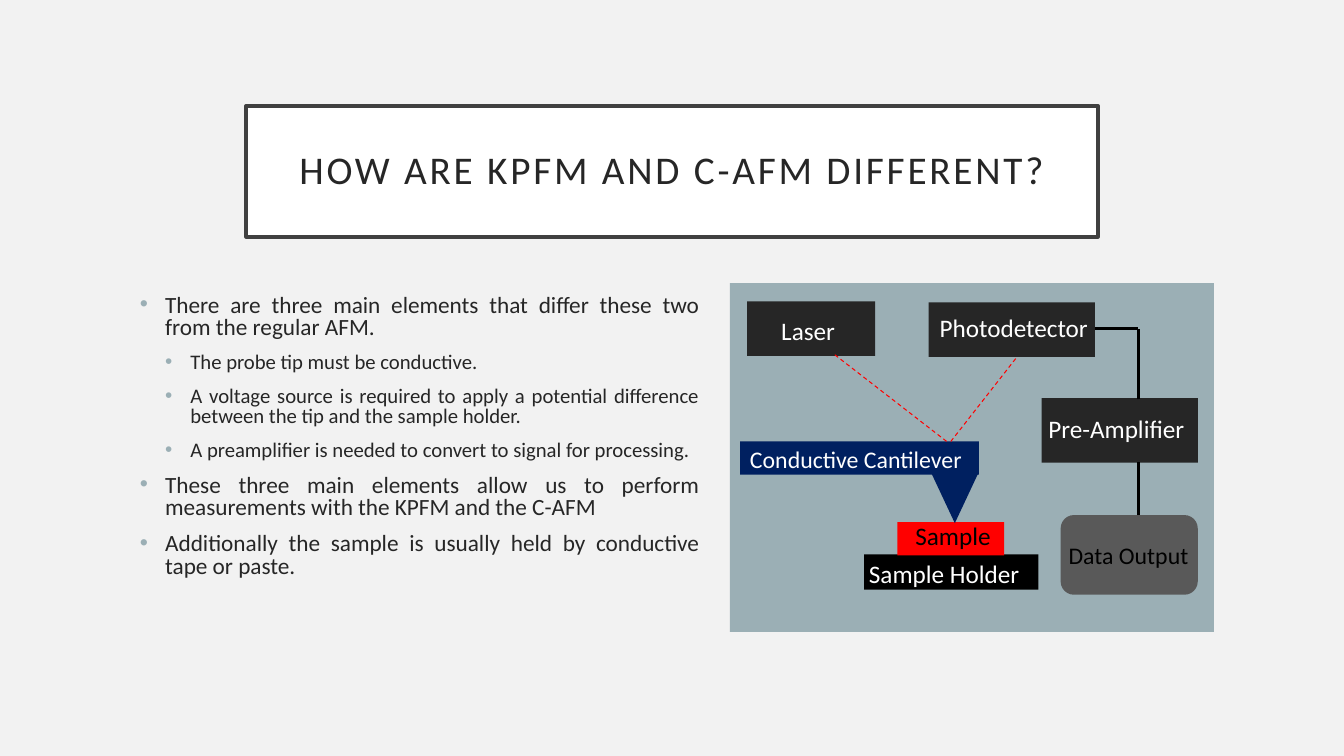
from dataclasses import dataclass

from lxml import etree
from pptx import Presentation
from pptx.dml.color import RGBColor
from pptx.enum.dml import MSO_LINE
from pptx.enum.shapes import MSO_CONNECTOR, MSO_SHAPE
from pptx.enum.text import MSO_ANCHOR, MSO_AUTO_SIZE, PP_ALIGN
from pptx.oxml.ns import qn
from pptx.util import Emu, Inches, Pt

RECTANGLE = MSO_SHAPE.RECTANGLE
ROUNDED = MSO_SHAPE.ROUNDED_RECTANGLE
TRIANGLE = MSO_SHAPE.ISOSCELES_TRIANGLE
STRAIGHT = MSO_CONNECTOR.STRAIGHT
DASH = MSO_LINE.DASH
LEFT, CENTER, JUSTIFY = PP_ALIGN.LEFT, PP_ALIGN.CENTER, PP_ALIGN.JUSTIFY

# The grid has 75 rows; columns are as wide as rows are high
SLIDE_WIDTH, SLIDE_HEIGHT = Inches(13.33), Inches(7.5)
CELL = SLIDE_HEIGHT / 75
FONT = "Calibri"
COLORS = {
    "background": "F2F2F2", "white": "FFFFFF", "black": "000000",
    "frame": "404040", "dark": "262626", "accent": "9BAFB5",
    "red": "FF0000", "navy": "002060", "gray": "595959",
}


@dataclass(frozen=True)
class Area:
    column: float
    row: float
    columns: float
    rows: float

    def lengths(self) -> tuple[Emu, ...]:
        return tuple(grid(cells) for cells in
                     (self.column, self.row, self.columns, self.rows))


@dataclass(frozen=True)
class Block:
    area: Area
    color: str
    kind: int = RECTANGLE
    rotation: float = 0


@dataclass(frozen=True)
class Label:
    text: str
    area: Area
    color: str = "white"
    size: float = 18


@dataclass(frozen=True)
class Link:
    start: tuple[float, float]
    end: tuple[float, float]
    color: str = "black"
    width: float = 2.5
    dashed: bool = False


@dataclass(frozen=True)
class Bullet:
    text: str
    level: int = 0


TITLE = "HOW ARE KPFM AND C-AFM DIFFERENT?"
TITLE_AREA = Area(24.4, 10.5, 84.5, 13)
BODY_AREA = Area(12.9, 28.8, 57.4, 33.9)
BULLET_SIZES = (16.6, 14.8)
BULLETS = [
    Bullet("There are three main elements that differ these two from the regular AFM."),
    Bullet("The probe tip must be conductive.", 1),
    Bullet("A voltage source is required to apply a potential difference "
           "between the tip and the sample holder.", 1),
    Bullet("A preamplifier is needed to convert to signal for processing.", 1),
    Bullet("These three main elements allow us to perform measurements "
           "with the KPFM and the C-AFM"),
    Bullet("Additionally the sample is usually held by conductive tape or paste."),
]
BLOCKS = [
    Block(Area(72.4, 28.1, 48, 34.6), "accent"),
    Block(Area(86.4 - 0.7, 55, 17.3, 3.5), "black"),
    Block(Area(89, 51.8, 10.6, 3.3), "red"),
    Block(Area(92.4, 47, 4.6, 4.9), "navy", TRIANGLE, 180),
    Block(Area(73.4, 43.8, 23.7, 3.3), "navy"),
    Block(Area(74.1, 29.9, 12.7, 5.4), "dark"),
    Block(Area(92.1, 30, 16.5, 5.4), "dark"),
    Block(Area(103.3, 39.5, 15.5, 6.4), "dark"),
    Block(Area(105.2, 51.1, 13.6, 7.9), "gray", ROUNDED),
]
LABELS = [
    Label("Sample Holder", Area(85.2, 54.9, 20, 4)),
    Label("Sample", Area(89.8, 51.1, 10.6, 4), "black"),
    Label("Conductive Cantilever", Area(73.4, 43.6, 25.7, 3.9), size=17),
    Label("Laser", Area(76.5, 30.8, 10.7, 4)),
    Label("Photodetector", Area(92.2, 30.5, 17.2, 4)),
    Label("Pre-Amplifier", Area(103, 40.5, 17.3, 4)),
    Label("Data Output", Area(105, 53.1, 15.3, 3.9), "black", 17),
]
LINKS = [
    Link((82.8, 35.2), (93.9, 43.8), "red", 0.75, True),
    Link((94.3, 43.8), (100.8, 35.5), "red", 0.75, True),
    Link((108.6, 32.6), (112.9, 32.6)),
    Link((112.9, 39.6), (112.9, 32.6)),
    Link((112.9, 51.1), (112.9, 45.8)),
]


def grid(cells: float) -> Emu:
    return Emu(round(cells * CELL))


def rgb(name: str) -> RGBColor:
    return RGBColor.from_string(COLORS[name])


def add_run(paragraph, text: str, size: float, color: str):
    run = paragraph.add_run()
    run.text = text
    run.font.name = FONT
    run.font.size = Pt(size)
    run.font.color.rgb = rgb(color)
    return run


def format_title(title) -> None:
    title.left, title.top, title.width, title.height = TITLE_AREA.lengths()
    title.fill.solid()
    title.fill.fore_color.rgb = rgb("white")
    title.line.color.rgb = rgb("frame")
    title.line.width = Pt(2.5)
    frame = title.text_frame
    frame.word_wrap = True
    frame.auto_size = MSO_AUTO_SIZE.NONE
    frame.vertical_anchor = MSO_ANCHOR.MIDDLE
    frame.margin_left = frame.margin_right = grid(2)
    frame.margin_top = frame.margin_bottom = grid(2)
    paragraph = frame.paragraphs[0]
    paragraph.alignment = CENTER
    paragraph.line_spacing = 0.9
    run = add_run(paragraph, TITLE, 28, "dark")
    run.font._element.set("spc", "200")


def add_text_frame(slide, area: Area):
    frame = slide.shapes.add_textbox(*area.lengths()).text_frame
    frame.word_wrap = True
    return frame


def add_bullets(slide, bullets: list[Bullet]) -> None:
    frame = add_text_frame(slide, BODY_AREA)
    for index, bullet in enumerate(bullets):
        paragraph = frame.add_paragraph() if index else frame.paragraphs[0]
        paragraph.alignment = JUSTIFY
        paragraph.level = bullet.level
        paragraph.line_spacing = 0.8
        paragraph.space_before = Pt(10)
        add_run(paragraph, bullet.text, BULLET_SIZES[bullet.level], "dark")
        # Hanging indent and coloured bullet
        properties = paragraph._p.get_or_add_pPr()
        properties.set("marL", str(grid(2.5 * (bullet.level + 1))))
        properties.set("indent", str(-grid(2.5)))
        bullet_color = etree.SubElement(properties, qn("a:buClr"))
        etree.SubElement(bullet_color, qn("a:srgbClr"), val=COLORS["accent"])
        etree.SubElement(properties, qn("a:buFont"), typeface="Arial")
        etree.SubElement(properties, qn("a:buChar"), char="•")


def add_block(slide, block: Block) -> None:
    shape = slide.shapes.add_shape(block.kind, *block.area.lengths())
    shape.shadow.inherit = False
    shape.rotation = block.rotation
    shape.fill.solid()
    shape.fill.fore_color.rgb = rgb(block.color)
    shape.line.fill.background()


def add_label(slide, label: Label) -> None:
    paragraph = add_text_frame(slide, label.area).paragraphs[0]
    paragraph.alignment = LEFT
    add_run(paragraph, label.text, label.size, label.color)


def add_link(slide, link: Link) -> None:
    points = [grid(cells) for cells in link.start + link.end]
    connector = slide.shapes.add_connector(STRAIGHT, *points)
    connector.line.color.rgb = rgb(link.color)
    connector.line.width = Pt(link.width)
    if link.dashed:
        connector.line.dash_style = DASH
    etree.SubElement(connector._element.spPr, qn("a:effectLst"))


def main() -> None:
    presentation = Presentation()
    presentation.slide_width, presentation.slide_height = SLIDE_WIDTH, SLIDE_HEIGHT
    slide = presentation.slides.add_slide(presentation.slide_layouts[5])
    slide.background.fill.solid()
    slide.background.fill.fore_color.rgb = rgb("background")

    # Title and explanation
    format_title(slide.shapes.title)
    add_bullets(slide, BULLETS)

    # Measurement diagram
    for block in BLOCKS:
        add_block(slide, block)
    for link in LINKS:
        add_link(slide, link)
    for label in LABELS:
        add_label(slide, label)
    presentation.save("out.pptx")


if __name__ == "__main__":
    main()
